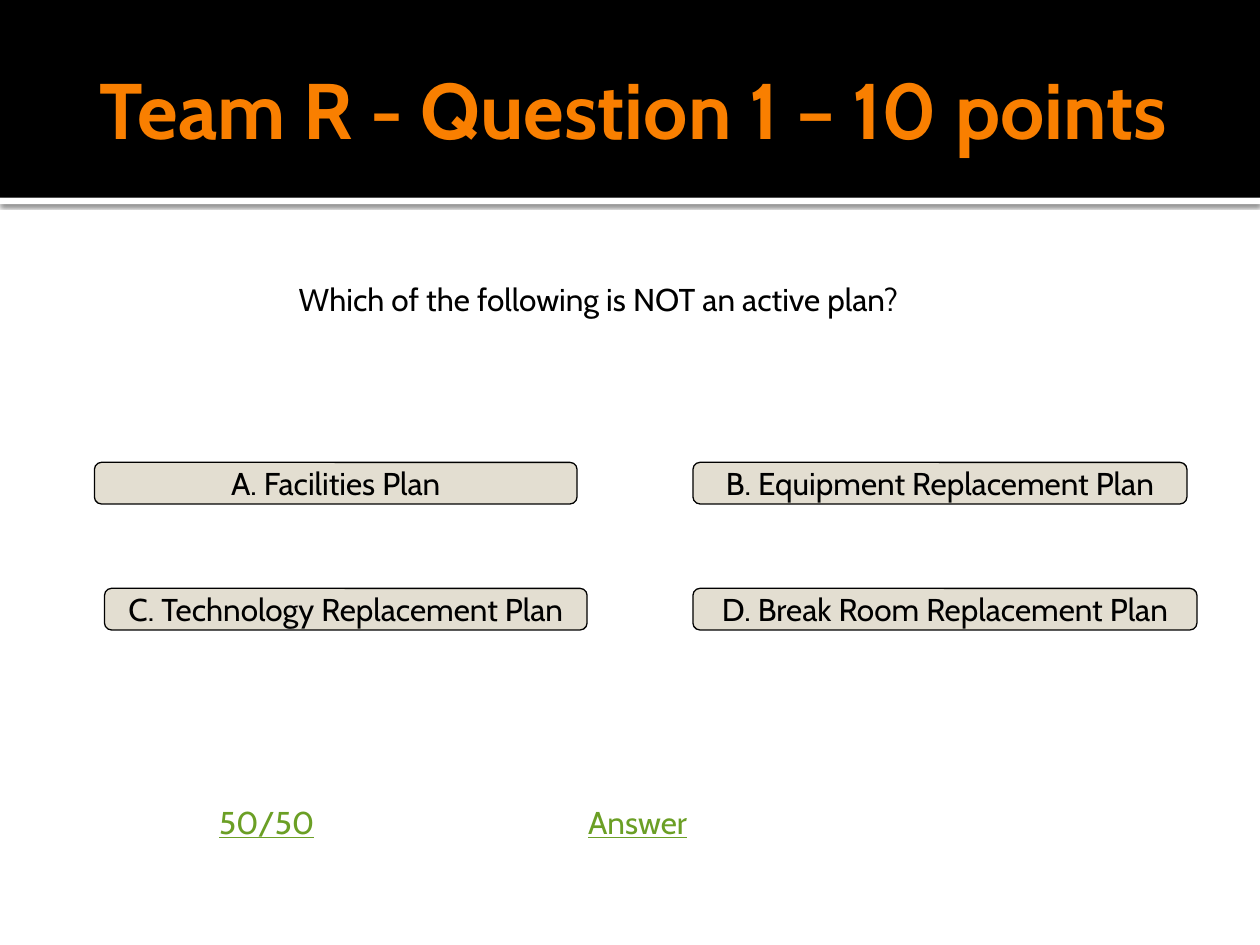
from lxml import etree
from pptx import Presentation
from pptx.dml.color import RGBColor
from pptx.enum.shapes import MSO_SHAPE
from pptx.enum.text import MSO_ANCHOR, PP_ALIGN
from pptx.util import Inches, Pt

RECTANGLE = MSO_SHAPE.RECTANGLE
ROUNDED = MSO_SHAPE.ROUNDED_RECTANGLE
MIDDLE = MSO_ANCHOR.MIDDLE
CENTER = PP_ALIGN.CENTER

BLACK = RGBColor(0x00, 0x00, 0x00)
WHITE = RGBColor(0xFF, 0xFF, 0xFF)
ORANGE = RGBColor(0xF9, 0x7F, 0x00)
BEIGE = RGBColor(0xE3, 0xDE, 0xD1)
GREEN = RGBColor(0x6B, 0x9F, 0x25)
FONT = "Cabin"

STRIP_SHADOW = """
<a:effectLst xmlns:a="http://schemas.openxmlformats.org/drawingml/2006/main">
  <a:outerShdw blurRad="31750" dist="10160" dir="5400000" algn="t" rotWithShape="0">
    <a:srgbClr val="000000"><a:alpha val="60000"/></a:srgbClr>
  </a:outerShdw>
</a:effectLst>"""


def write(frame, text, size=18, color=BLACK, bold=False, underline=False):
    frame.text = text
    paragraph = frame.paragraphs[0]
    paragraph.alignment = CENTER
    for span in paragraph.runs:
        span.font.name = FONT
        span.font.size = Pt(size)
        span.font.bold = bold
        span.font.underline = underline
        span.font.color.rgb = color


def add_box(page, kind, left, top, width, height, fill):
    box = page.shapes.add_shape(
        kind, Inches(left), Inches(top), Inches(width), Inches(height))
    box.shadow.inherit = False
    box.fill.solid()
    box.fill.fore_color.rgb = fill
    box.line.fill.background()
    return box


deck = Presentation()
deck.slide_width, deck.slide_height = Inches(10), Inches(7.5)
page = deck.slides.add_slide(deck.slide_layouts[5])

# Header band with a shadowed strip under it
BAND_HEIGHT = 1.57
strip = add_box(page, RECTANGLE, 0, BAND_HEIGHT, 10, 0.05, WHITE)
properties = strip._element.spPr
properties.remove(properties.find("{*}effectLst"))
properties.append(etree.fromstring(STRIP_SHADOW))
add_box(page, RECTANGLE, 0, 0, 10, BAND_HEIGHT, BLACK)

# Title, brought in front of the band
title = page.shapes.title
page.shapes._spTree.append(title._element)
title.left, title.top = Inches(0.5), Inches(0.17)
title.width, title.height = Inches(9), Inches(1.37)
title_frame = title.text_frame
title_frame.margin_left = Inches(0.1)
title_frame.margin_right = Inches(0.05)
title_frame.vertical_anchor = MIDDLE
write(title_frame, "Team R - Question 1 – 10 points", 45, ORANGE, bold=True)

# Question
question = page.shapes.add_textbox(
    Inches(2.25), Inches(2.17), Inches(5), Inches(0.7))
question.text_frame.word_wrap = True
write(question.text_frame, "Which of the following is NOT an active plan?")

# Answer choices: left, top, width
choices = [
    ("A. Facilities Plan", 0.75, 3.67, 3.83),
    ("B. Equipment Replacement Plan", 5.5, 3.67, 3.92),
    ("C. Technology Replacement Plan", 0.83, 4.67, 3.83),
    ("D. Break Room Replacement Plan", 5.5, 4.67, 4),
]
for text, left, top, width in choices:
    choice = add_box(page, ROUNDED, left, top, width, 0.33, BEIGE)
    choice.line.color.rgb = BLACK
    choice.line.width = Pt(0.75)
    choice.text_frame.word_wrap = False
    choice.text_frame.vertical_anchor = MIDDLE
    write(choice.text_frame, text)

# Help options
options = ["50/50", "Answer", ""]
table = page.shapes.add_table(
    1, len(options), Inches(0.58), Inches(6.33), Inches(8.83), Inches(0.58)).table
table.first_row = False
table.horz_banding = False
for cell, text in zip(table.rows[0].cells, options):
    cell.fill.background()
    cell.margin_left = Inches(0.23)
    write(cell.text_frame, text, color=GREEN, underline=True)

deck.save("out.pptx")
